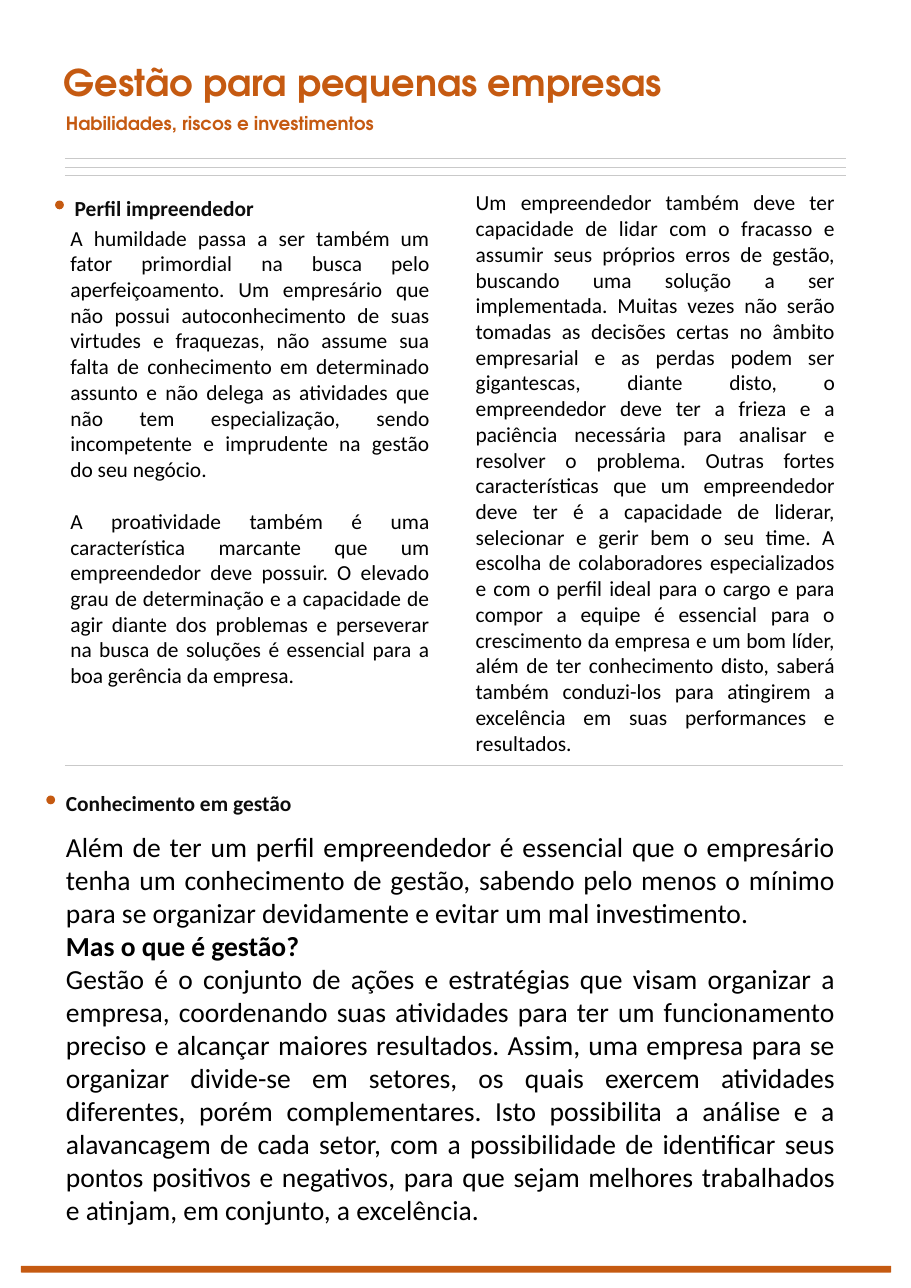
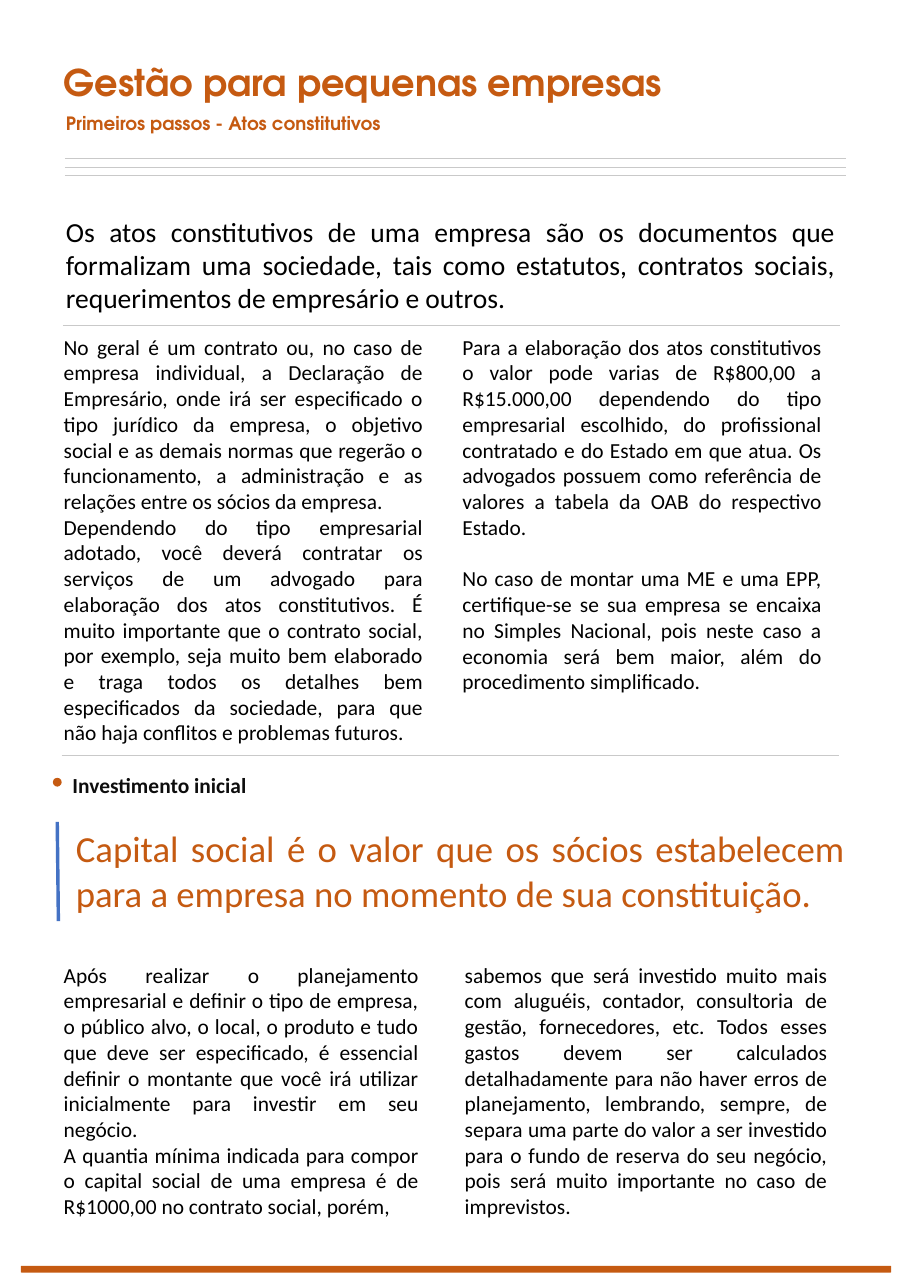
from dataclasses import dataclass
from lxml import etree
from pptx import Presentation
from pptx import util as u
from pptx.dml.color import RGBColor
from pptx.enum import shapes, text
from pptx.oxml.ns import qn


@dataclass(frozen=True)
class Theme:
    brand: str = "C55A11"
    rule: str = "C9C9C9"
    bar: str = "4472C4"
    ink: str = "000000"
    head: str = "0D0D0D"
    show: str = "TeX Gyre Adventor"
    body: str = "Calibri"
    big: int = 24
    lead: int = 18
    base: int = 14
    small: int = 12
    gap: int = 17
    pitch: float = 18.8


T = Theme()
TITLE = "Gestão para pequenas empresas"

PAGES = [
    {
        "sub": "Habilidades, riscos e investimentos",
        "rules": [(0.59, 6.95)],
        "heads": [
            (0.58, 1.69, "Perfil impreendedor"),
            (0.5, 7.09, "Conhecimento em gestão"),
        ],
        "texts": [
            {
                "at": (0.54, 1.99, 3.46, 4.34),
                "gap": T.gap,
                "paras": [
                    "A humildade passa a ser também um fator primordial na busca pelo aperfeiçoamento. Um empresário que não possui autoconhecimento de suas virtudes e fraquezas, não assume sua falta de conhecimento em determinado assunto e não delega as atividades que não tem especialização, sendo incompetente e imprudente na gestão do seu negócio.",
                    "A proatividade também é uma característica marcante que um empreendedor deve possuir. O elevado grau de determinação e a capacidade de agir diante dos problemas e perseverar na busca de soluções é essencial para a boa gerência da empresa.",
                ],
            },
            {
                "at": (4.22, 1.67, 3.46, 5.28),
                "paras": [
                    "Um empreendedor também deve ter capacidade de lidar com o fracasso e assumir seus próprios erros de gestão, buscando uma solução a ser implementada. Muitas vezes não serão tomadas as decisões certas no âmbito empresarial e as perdas podem ser gigantescas, diante disto, o empreendedor deve ter a frieza e a paciência necessária para analisar e resolver o problema. Outras fortes características que um empreendedor deve ter é a capacidade de liderar, selecionar e gerir bem o seu time. A escolha de colaboradores especializados e com o perfil ideal para o cargo e para compor a equipe é essencial para o crescimento da empresa e um bom líder, além de ter conhecimento disto, saberá também conduzi-los para atingirem a excelência em suas performances e resultados.",
                ],
            },
            {
                "at": (0.5, 7.48, 7.18, 4.04),
                "size": T.lead,
                "bold": (1,),
                "paras": [
                    "Além de ter um perfil empreendedor é essencial que o empresário tenha um conhecimento de gestão, sabendo pelo menos o mínimo para se organizar devidamente e evitar um mal investimento.",
                    "Mas o que é gestão?",
                    "Gestão é o conjunto de ações e estratégias que visam organizar a empresa, coordenando suas atividades para ter um funcionamento preciso e alcançar maiores resultados. Assim, uma empresa para se organizar divide-se em setores, os quais exercem atividades diferentes, porém complementares. Isto possibilita a análise e a alavancagem de cada setor, com a possibilidade de identificar seus pontos positivos e negativos, para que sejam melhores trabalhados e atinjam, em conjunto, a excelência.",
                ],
            },
        ],
    },
    {
        "sub": "Primeiros passos - Atos constitutivos",
        "rules": [(0.57, 2.95), (0.56, 6.86)],
        "heads": [(0.56, 6.93, "Investimento inicial")],
        "bar": (0.52, 7.46, 0.53, 8.36),
        "texts": [
            {
                "at": (0.5, 1.9, 7.18, 1.01),
                "size": T.lead,
                "paras": [
                    "Os atos constitutivos de uma empresa são os documentos que formalizam uma sociedade, tais como estatutos, contratos sociais, requerimentos de empresário e outros.",
                ],
            },
            {
                "at": (0.48, 2.98, 3.46, 3.87),
                "paras": [
                    "No geral é um contrato ou, no caso de empresa individual, a Declaração de Empresário, onde irá ser especificado o tipo jurídico da empresa, o objetivo social e as demais normas que regerão o funcionamento, a administração e as relações entre os sócios da empresa.",
                    "Dependendo do tipo empresarial adotado, você deverá contratar os serviços de um advogado para elaboração dos atos constitutivos. É muito importante que o contrato social, por exemplo, seja muito bem elaborado e traga todos os detalhes bem especificados da sociedade, para que não haja conflitos e problemas futuros.",
                ],
            },
            {
                "at": (4.1, 2.98, 3.46, 3.4),
                "gap": T.gap,
                "paras": [
                    "Para a elaboração dos atos constitutivos o valor pode varias de R$800,00 a R$15.000,00 dependendo do tipo empresarial escolhido, do profissional contratado e do Estado em que atua. Os advogados possuem como referência de valores a tabela da OAB do respectivo Estado.",
                    "No caso de montar uma ME e uma EPP, certifique-se se sua empresa se encaixa no Simples Nacional, pois neste caso a economia será bem maior, além do procedimento simplificado.",
                ],
            },
            {
                "at": (0.59, 7.45, 7.18, 0.91),
                "size": T.big,
                "color": T.brand,
                "paras": [
                    "Capital social é o valor que os sócios estabelecem para a empresa no momento de sua constituição.",
                ],
            },
            {
                "at": (0.48, 8.68, 3.42, 2.46),
                "paras": [
                    "Após realizar o planejamento empresarial e definir o tipo de empresa, o público alvo, o local, o produto e tudo que deve ser especificado, é essencial definir o montante que você irá utilizar inicialmente para investir em seu negócio.",
                    "A quantia mínima indicada para compor o capital social de uma empresa é de R$1000,00 no contrato social, porém,",
                ],
            },
            {
                "at": (4.12, 8.68, 3.49, 2.46),
                "paras": [
                    "sabemos que será investido muito mais com aluguéis, contador, consultoria de gestão, fornecedores, etc. Todos esses gastos devem ser calculados detalhadamente para não haver erros de planejamento, lembrando, sempre, de separa uma parte do valor a ser investido para o fundo de reserva do seu negócio, pois será muito importante no caso de imprevistos.",
                ],
            },
        ],
    },
]


def inch(vals):
    return [u.Inches(v) for v in vals]


def line(slide, ends, color=T.rule, width=0.5):
    con = slide.shapes.add_connector(shapes.MSO_CONNECTOR.STRAIGHT, *inch(ends))
    con.line.color.rgb = RGBColor.from_string(color)
    con.line.width = u.Pt(width)
    etree.SubElement(con._element.spPr, qn("a:effectLst"))


def solid(slide, kind, at):
    shape = slide.shapes.add_shape(kind, *inch(at))
    shape.shadow.inherit = False
    shape.fill.solid()
    shape.fill.fore_color.rgb = RGBColor.from_string(T.brand)
    shape.line.fill.background()
    return shape


def write(slide, at, paras, size=T.base, color=T.ink, font=T.body, bold=(),
          gap=0, pitch=None, align=text.PP_ALIGN.JUSTIFY, wrap=True):
    frame = slide.shapes.add_textbox(*inch(at)).text_frame
    frame.word_wrap = wrap
    frame.auto_size = text.MSO_AUTO_SIZE.SHAPE_TO_FIT_TEXT
    for i, words in enumerate(paras):
        para = frame.add_paragraph() if i else frame.paragraphs[0]
        para.alignment = align
        if i and gap:
            para.space_before = u.Pt(gap)
        if pitch:
            para.line_spacing = u.Pt(pitch)
        run = para.add_run()
        run.text = words
        run.font.name = font
        run.font.size = u.Pt(size)
        run.font.bold = i in bold
        run.font.color.rgb = RGBColor.from_string(color)
    return frame


def label(slide, at, words, **style):
    return write(slide, at, [words], bold=(0,), align=text.PP_ALIGN.LEFT, **style)


def base(slide, sub):
    band = solid(slide, shapes.MSO_SHAPE.ROUNDED_RECTANGLE, (0.19, 11.49, 7.9, 0.06))
    band.adjustments[0] = 0.07
    look = {"color": T.brand, "font": T.show}
    title = label(slide, (0.48, 0.49, 5.69, 0.5), TITLE, size=T.big, wrap=False, **look)
    title.vertical_anchor = text.MSO_ANCHOR.MIDDLE
    label(slide, (0.5, 0.97, 4.13, 0.3), sub, size=T.small, **look)
    for i in range(3):
        y = 1.44 + i * 0.075
        line(slide, (0.59, y, 7.68, y))


def head(slide, x, y, words):
    label(slide, (x, y, 6.96, 0.35), words, color=T.head, pitch=T.pitch)
    solid(slide, shapes.MSO_SHAPE.OVAL, (x - 0.08, y + 0.13, 0.08, 0.08))


def main():
    deck = Presentation()
    deck.slide_width, deck.slide_height = inch((8.27, 11.69))
    for page in PAGES:
        slide = deck.slides.add_slide(deck.slide_layouts[6])
        base(slide, page["sub"])
        for x, y in page["rules"]:
            line(slide, (x, y, x + 7.06, y))
        for item in page["heads"]:
            head(slide, *item)
        if "bar" in page:
            line(slide, page["bar"], T.bar, 2.25)
        for block in page["texts"]:
            write(slide, **block)
    deck.save("out.pptx")


if __name__ == "__main__":
    main()
